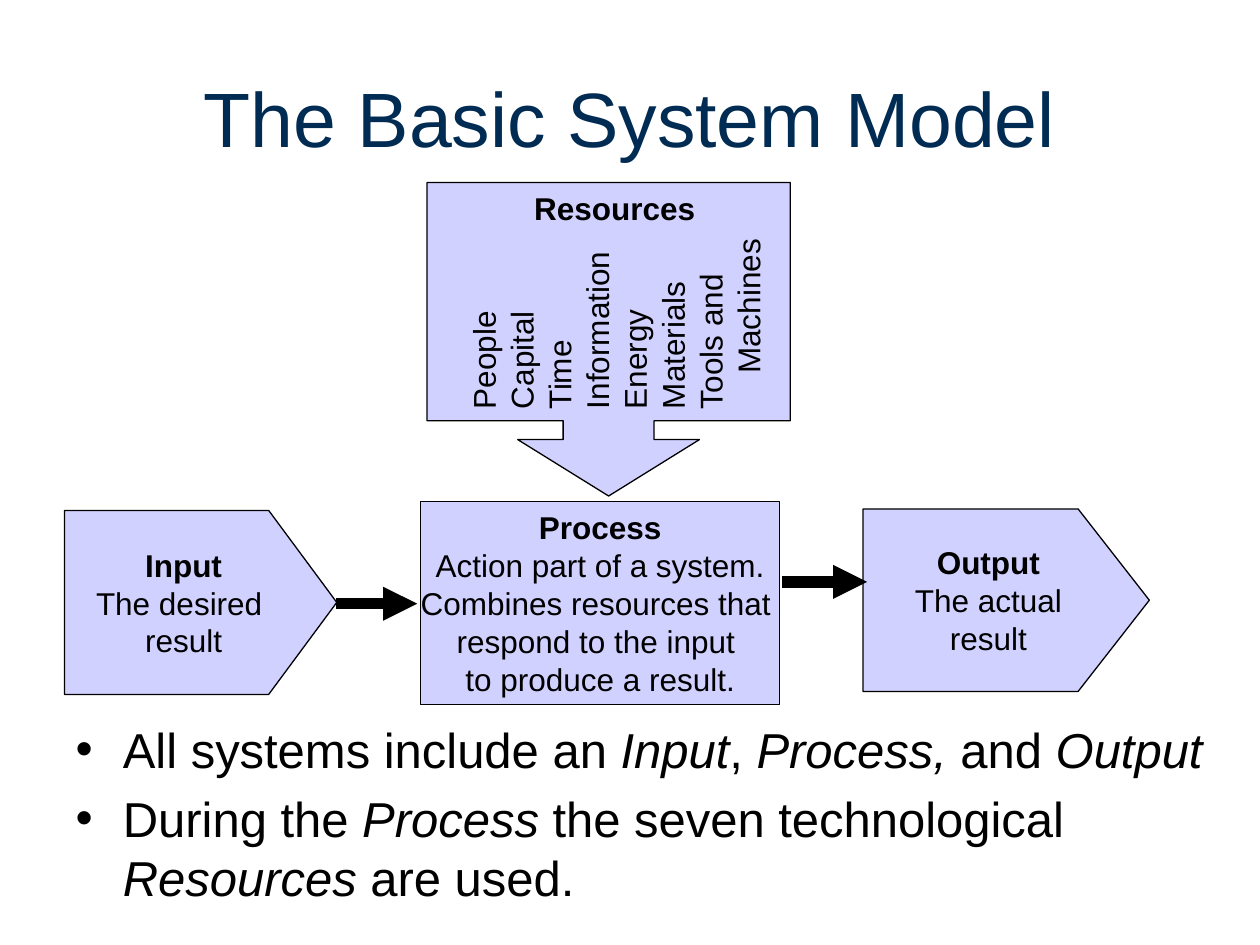
import pptx
import pptx.util
import pptx.dml.color
import pptx.enum.shapes
import pptx.enum.text
import pptx.oxml.ns
from lxml import etree
from pptx.util import Cm

COLOURS = {"title": "002B52", "text": "000000", "line": "000000", "panel": "0000FF"}
FONT = "Arial"
PANEL_ALPHA = 18
SHAPES = pptx.enum.shapes.MSO_SHAPE
CENTRE = pptx.enum.text.PP_ALIGN.CENTER
MIDDLE = pptx.enum.text.MSO_ANCHOR.MIDDLE
FIT = pptx.enum.text.MSO_AUTO_SIZE


def colour(name):
    return pptx.dml.color.RGBColor.from_string(COLOURS[name])


def add_xml(parent, tag, **attributes):
    return etree.SubElement(parent, pptx.oxml.ns.qn(tag), **attributes)


class SlideBuilder:
    """Holds the style and the current slide; lengths are in centimetres."""

    def __init__(self, page):
        self.page = page

    def place(self, shape, box):
        shape.left, shape.top, shape.width, shape.height = map(Cm, box)

    def style(self, para, size, name="text", bold=None):
        para.font.name = FONT
        para.font.size = pptx.util.Pt(size)
        para.font.color.rgb = colour(name)
        para.font.bold = bold

    def write_lines(self, frame, lines, bold_first=False, align=None):
        frame.word_wrap = False
        for index, line in enumerate(lines):
            para = frame.paragraphs[0] if index == 0 else frame.add_paragraph()
            para.text = line
            para.alignment = align
            self.style(para, 18, bold=bold_first and index == 0)

    def title(self, text, box):
        shape = self.page.shapes.title
        self.place(shape, box)
        shape.text_frame.text = text
        shape.text_frame.vertical_anchor = MIDDLE
        para = shape.text_frame.paragraphs[0]
        para.alignment = CENTRE
        self.style(para, 44, "title")

    def bullets(self, items, box):
        """Each item is a list of spans, alternately upright and italic."""
        shape = self.page.placeholders[1]
        self.place(shape, box)
        frame = shape.text_frame
        frame.auto_size = FIT.NONE
        for index, spans in enumerate(items):
            para = frame.paragraphs[0] if index == 0 else frame.add_paragraph()
            para.space_before = pptx.util.Pt(5.6 if index else 0)
            self.style(para, 28)
            for position, text in enumerate(spans):
                span = para.add_run()
                span.text = text
                span.font.italic = position % 2 == 1

    def panel(self, kind, box, adjustments=(), lines=()):
        shape = self.page.shapes.add_shape(kind, *map(Cm, box))
        shape.shadow.inherit = False
        for index, value in enumerate(adjustments):
            shape.adjustments[index] = value
        shape.fill.solid()
        shape.fill.fore_color.rgb = colour("panel")
        fill = shape.fill._xPr.find(pptx.oxml.ns.qn("a:solidFill"))
        add_xml(fill[0], "a:alpha", val=str(PANEL_ALPHA * 1000))
        shape.line.color.rgb = colour("line")
        shape.line.width = pptx.util.Pt(0.75)
        shape.text_frame.vertical_anchor = MIDDLE
        self.write_lines(shape.text_frame, lines, bold_first=True, align=CENTRE)

    def label(self, lines, box, rotation=0, bold_first=False):
        shape = self.page.shapes.add_textbox(*map(Cm, box))
        shape.rotation = rotation
        self.write_lines(shape.text_frame, lines, bold_first)
        shape.text_frame.auto_size = FIT.SHAPE_TO_FIT_TEXT
        return shape

    def arrow(self, left, right, height):
        line = self.page.shapes.add_connector(
            pptx.enum.shapes.MSO_CONNECTOR.STRAIGHT,
            Cm(left), Cm(height), Cm(right), Cm(height))
        line.line.color.rgb = colour("line")
        line.line.width = pptx.util.Pt(6.5)
        add_xml(line.line._get_or_add_ln(), "a:tailEnd", type="triangle")
        add_xml(line._element.spPr, "a:effectLst")


def main():
    deck = pptx.Presentation()
    deck.slide_width, deck.slide_height = Cm(25.4), Cm(19.05)
    builder = SlideBuilder(deck.slides.add_slide(deck.slide_layouts[1]))

    builder.title("The Basic System Model", (1.27, 0.76, 22.86, 3.18))
    builder.bullets([
        ["All systems include an ", "Input", ", ", "Process,", " and ", "Output"],
        ["During the ", "Process", " the seven technological ", "Resources", " are used."],
    ], (1.27, 14.38, 23.57, 4.67))

    builder.panel(SHAPES.PENTAGON, (1.3, 10.29, 5.49, 3.71), [0.37],
                  ["Input", "The desired ", "result"])
    builder.panel(SHAPES.PENTAGON, (17.4, 10.26, 5.77, 3.68), [0.39],
                  ["Output", "The actual", "result"])
    builder.panel(SHAPES.RECTANGLE, (8.48, 10.11, 7.24, 4.09), lines=[
        "Process", "Action part of a system.", "Combines resources that ",
        "respond to the input ", "to produce a result."])
    builder.panel(SHAPES.DOWN_ARROW_CALLOUT, (8.61, 3.68, 7.32, 6.32),
                  [0.29, 0.29, 0.18, 0.76])

    builder.arrow(6.78, 8.41, 12.17)
    builder.arrow(15.77, 17.48, 11.73)

    resources = builder.label(
        ["People", "Capital", "Time", "Information", "Energy", "Materials",
         "Tools and", "Machines"], (10.44, 3.35, 3.94, 6.35), rotation=270)
    machines = resources.text_frame.paragraphs[-1]
    machines._p.get_or_add_pPr().set("marL", str(Cm(0.71)))
    builder.label(["Resources"], (10.52, 3.68, 3.76, 1.02), bold_first=True)

    deck.save("out.pptx")


if __name__ == "__main__":
    main()
